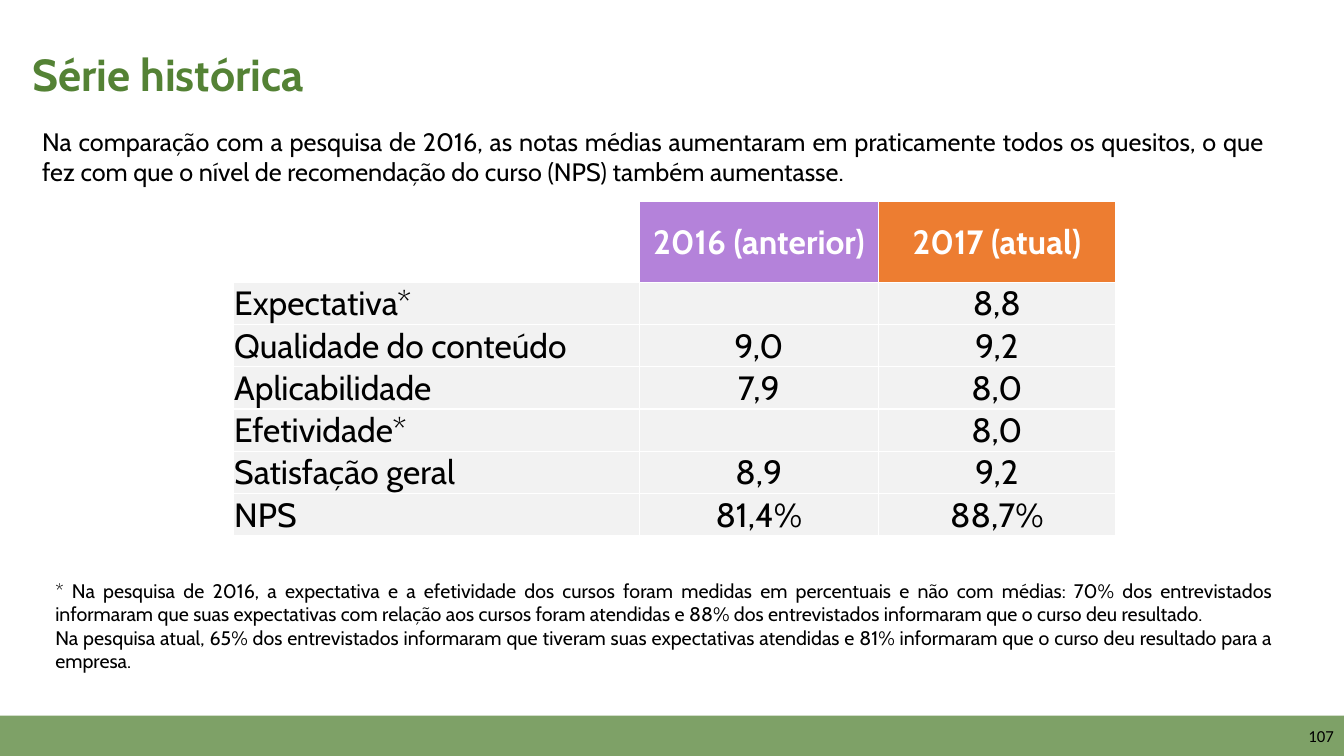
"""Build the slide that compares the 2016 and 2017 survey results."""
import lxml.etree
import pptx
import pptx.dml.color
import pptx.enum.shapes
import pptx.enum.text
import pptx.oxml.ns
import pptx.util

Pt = pptx.util.Pt
RGBColor = pptx.dml.color.RGBColor
ALIGN = pptx.enum.text.PP_ALIGN
ANCHOR = pptx.enum.text.MSO_ANCHOR
qn = pptx.oxml.ns.qn

GREEN = RGBColor(0x54, 0x82, 0x35)
PURPLE = RGBColor(0xB4, 0x82, 0xDA)
ORANGE = RGBColor(0xED, 0x7D, 0x31)
GRAY = RGBColor(0xF2, 0xF2, 0xF2)
WHITE = RGBColor(0xFF, 0xFF, 0xFF)
BLACK = RGBColor(0, 0, 0)

TITLE = "Série histórica"
INTRO = (
    "Na comparação com a pesquisa de 2016, as notas médias aumentaram em praticamente todos "
    "os quesitos, o que fez com que o nível de recomendação do curso (NPS) também aumentasse."
)
NOTES = [
    "* Na pesquisa de 2016, a expectativa e a efetividade dos cursos foram medidas em "
    "percentuais e não com médias: 70% dos entrevistados informaram que suas expectativas com "
    "relação aos cursos foram atendidas e 88% dos entrevistados informaram que o curso deu resultado.",
    "Na pesquisa atual, 65% dos entrevistados informaram que tiveram suas expectativas atendidas "
    "e 81% informaram que o curso deu resultado para a empresa.",
]
PAGE_NUMBER = "107"
RESULTS = [
    ("", "2016 (anterior)", "2017 (atual)"),
    ("Expectativa*", "", "8,8"),
    ("Qualidade do conteúdo", "9,0", "9,2"),
    ("Aplicabilidade", "7,9", "8,0"),
    ("Efetividade*", "", "8,0"),
    ("Satisfação geral", "8,9", "9,2"),
    ("NPS", "81,4%", "88,7%"),
]
HEADER_FILLS = (None, PURPLE, ORANGE)
COLUMN_WIDTHS = (290, 171, 169)
HEADER_HEIGHT, ROW_HEIGHT = 57.6, 30.2
SLIDE_WIDTH, SLIDE_HEIGHT, FOOTER_HEIGHT = 960, 540, 28.8
FOOTER_TOP = SLIDE_HEIGHT - FOOTER_HEIGHT


def write_text(frame, *texts, size, color=BLACK, bold=False, font="Cabin", align=ALIGN.LEFT):
    for index, text in enumerate(texts):
        paragraph = frame.add_paragraph() if index else frame.paragraphs[0]
        paragraph.alignment = align
        run = paragraph.add_run()
        run.text = text
        run.font.name = font
        run.font.size = Pt(size)
        run.font.bold = bold
        run.font.color.rgb = color


def add_text(slide, box, *texts, anchor=ANCHOR.TOP, **text_format):
    frame = slide.shapes.add_textbox(*map(Pt, box)).text_frame
    frame.word_wrap = True
    frame.vertical_anchor = anchor
    write_text(frame, *texts, **text_format)


def add_borders(cell):
    properties = cell._tc.get_or_add_tcPr()
    for side in ("lnL", "lnR", "lnT", "lnB"):
        line = lxml.etree.SubElement(properties, qn(f"a:{side}"), w=str(Pt(1)))
        fill = lxml.etree.SubElement(line, qn("a:solidFill"))
        lxml.etree.SubElement(fill, qn("a:srgbClr"), val=str(WHITE))


def add_footer(slide):
    box = (0, FOOTER_TOP, SLIDE_WIDTH, FOOTER_HEIGHT)
    footer = slide.shapes.add_shape(pptx.enum.shapes.MSO_SHAPE.RECTANGLE, *map(Pt, box))
    footer.shadow.inherit = False
    footer.line.fill.background()
    footer.fill.solid()
    footer.fill.fore_color.rgb = GREEN
    color = footer.fill._xPr.find(qn("a:solidFill"))[0]
    lxml.etree.SubElement(color, qn("a:alpha"), val="75000")


def add_results(slide):
    height = HEADER_HEIGHT + ROW_HEIGHT * (len(RESULTS) - 1)
    box = (166.6, 144, sum(COLUMN_WIDTHS), height)
    table = slide.shapes.add_table(len(RESULTS), len(COLUMN_WIDTHS), *map(Pt, box)).table
    table.first_row = False
    table.horz_banding = False
    for column, width in zip(table.columns, COLUMN_WIDTHS):
        column.width = Pt(width)
    for row_index, values in enumerate(RESULTS):
        is_header = row_index == 0
        table.rows[row_index].height = Pt(HEADER_HEIGHT if is_header else ROW_HEIGHT)
        for column_index, value in enumerate(values):
            cell = table.cell(row_index, column_index)
            cell.margin_left = cell.margin_right = cell.margin_top = Pt(0.7)
            cell.margin_bottom = Pt(0)
            cell.vertical_anchor = ANCHOR.MIDDLE
            add_borders(cell)
            fill = HEADER_FILLS[column_index] if is_header else GRAY
            if fill is None:
                cell.fill.background()
            else:
                cell.fill.solid()
                cell.fill.fore_color.rgb = fill
            if value:
                write_text(
                    cell.text_frame, value, size=24, bold=is_header,
                    color=WHITE if is_header else BLACK,
                    align=ALIGN.CENTER if column_index else ALIGN.LEFT,
                )


def main():
    presentation = pptx.Presentation()
    presentation.slide_width = Pt(SLIDE_WIDTH)
    presentation.slide_height = Pt(SLIDE_HEIGHT)
    slide = presentation.slides.add_slide(presentation.slide_layouts[6])
    add_footer(slide)
    add_results(slide)
    add_text(slide, (926.6, FOOTER_TOP, 33.4, FOOTER_HEIGHT), PAGE_NUMBER,
             size=12, font="Calibri", align=ALIGN.RIGHT, anchor=ANCHOR.MIDDLE)
    add_text(slide, (23, 86.4, 887, 51), INTRO, size=18, align=ALIGN.JUSTIFY)
    add_text(slide, (15.8, 26.6, 934.6, 51.8), TITLE,
             size=32, color=GREEN, bold=True, anchor=ANCHOR.MIDDLE)
    add_text(slide, (32.4, 409.7, 884.2, 75), *NOTES, size=14, align=ALIGN.JUSTIFY)
    presentation.save("out.pptx")


if __name__ == "__main__":
    main()
